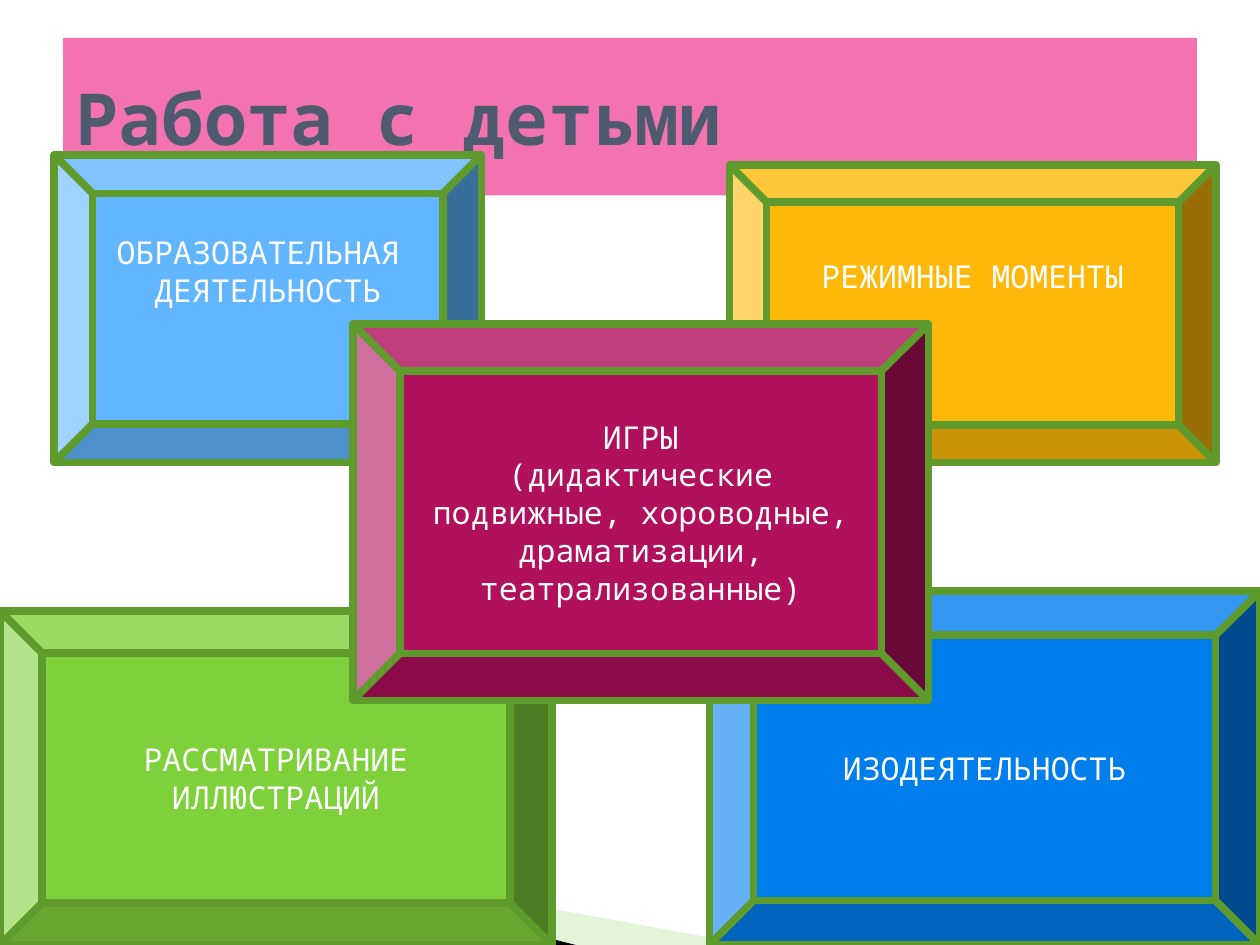
"""Build the slide about forms of work with children."""
from dataclasses import dataclass

import lxml.etree
import pptx
import pptx.dml.color
import pptx.enum.shapes
import pptx.enum.text
import pptx.oxml.ns
import pptx.util
from pptx.util import Inches

FONT = "Noto Sans Mono"


@dataclass
class Panel:
    left: float
    top: float
    width: float
    height: float
    color: str
    lines: list[str]
    bottom_margin: float = 0.05


@dataclass
class Wedge:
    points: list[tuple[float, float]]
    color: str
    opacity: int = 100


WEDGES = [
    Wedge([(0.55, 6.5), (0.55, 6.51), (5.95, 7.5), (4.56, 7.5)], "B8E7A1", 40),
    Wedge([(0.53, 6.49), (4.57, 7.5), (3.72, 7.5), (0.54, 6.5)], "000000"),
]
PANELS = [
    Panel(0.43, 1.23, 3.39, 2.44, "61B6FF", ["ОБРАЗОВАТЕЛЬНАЯ ", "ДЕЯТЕЛЬНОСТЬ"], 0.65),
    Panel(0, 4.85, 4.38, 2.65, "7FD13B", ["РАССМАТРИВАНИЕ ИЛЛЮСТРАЦИЙ"]),
    Panel(5.79, 1.31, 3.86, 2.36, "FEB80A", ["РЕЖИМНЫЕ МОМЕНТЫ"], 0.65),
    Panel(5.63, 4.69, 4.37, 2.81, "007EEB", ["ИЗОДЕЯТЕЛЬНОСТЬ"]),
    Panel(2.8, 2.57, 4.57, 2.99, "B0105C",
          ["ИГРЫ", "(дидактические", "подвижные, хороводные, драматизации, театрализованные)"]),
]


def rgb(color: str) -> pptx.dml.color.RGBColor:
    return pptx.dml.color.RGBColor.from_string(color)


def fill_shape(shape, color: str) -> None:
    shape.fill.solid()
    shape.fill.fore_color.rgb = rgb(color)


def format_paragraph(paragraph, size: float, color: str, alignment, bold: bool = False) -> None:
    paragraph.alignment = alignment
    paragraph.font.name = FONT
    paragraph.font.size = pptx.util.Pt(size)
    paragraph.font.bold = bold
    paragraph.font.color.rgb = rgb(color)


def add_wedge(slide, wedge: Wedge) -> None:
    start, *others = [(Inches(x), Inches(y)) for x, y in wedge.points]
    builder = slide.shapes.build_freeform(*start)
    builder.add_line_segments(others)
    shape = builder.convert_to_shape()
    shape.shadow.inherit = False
    shape.line.fill.background()
    fill_shape(shape, wedge.color)
    if wedge.opacity < 100:
        color = shape.element.spPr.find(".//" + pptx.oxml.ns.qn("a:srgbClr"))
        alpha = lxml.etree.SubElement(color, pptx.oxml.ns.qn("a:alpha"))
        alpha.set("val", str(wedge.opacity * 1000))


def add_title(slide, text: str) -> None:
    title = slide.shapes.title
    title.left, title.top = Inches(0.5), Inches(0.3)
    title.width, title.height = Inches(9), Inches(1.25)
    fill_shape(title, "F273AF")
    frame = title.text_frame
    frame.text = text
    frame.auto_size = pptx.enum.text.MSO_AUTO_SIZE.NONE
    frame.vertical_anchor = pptx.enum.text.MSO_ANCHOR.MIDDLE
    format_paragraph(frame.paragraphs[0], 41, "4E5B6F", pptx.enum.text.PP_ALIGN.LEFT, True)


def add_panel(slide, panel: Panel) -> None:
    shape = slide.shapes.add_shape(
        pptx.enum.shapes.MSO_SHAPE.BEVEL,
        Inches(panel.left), Inches(panel.top), Inches(panel.width), Inches(panel.height))
    shape.shadow.inherit = False
    fill_shape(shape, panel.color)
    shape.line.color.rgb = rgb("5E9B2C")
    shape.line.width = pptx.util.Pt(4.33)
    frame = shape.text_frame
    frame.word_wrap = True
    frame.margin_bottom = Inches(panel.bottom_margin)
    frame.vertical_anchor = pptx.enum.text.MSO_ANCHOR.MIDDLE
    frame.text = "\n".join(panel.lines)
    for paragraph in frame.paragraphs:
        format_paragraph(paragraph, 18, "FFFFFF", pptx.enum.text.PP_ALIGN.CENTER)


def main() -> None:
    presentation = pptx.Presentation()
    presentation.slide_width, presentation.slide_height = Inches(10), Inches(7.5)
    slide = presentation.slides.add_slide(presentation.slide_layouts.get_by_name("Title Only"))
    add_title(slide, "Работа с детьми")
    for wedge in WEDGES:
        add_wedge(slide, wedge)
    for panel in PANELS:
        add_panel(slide, panel)
    presentation.save("out.pptx")


if __name__ == "__main__":
    main()
